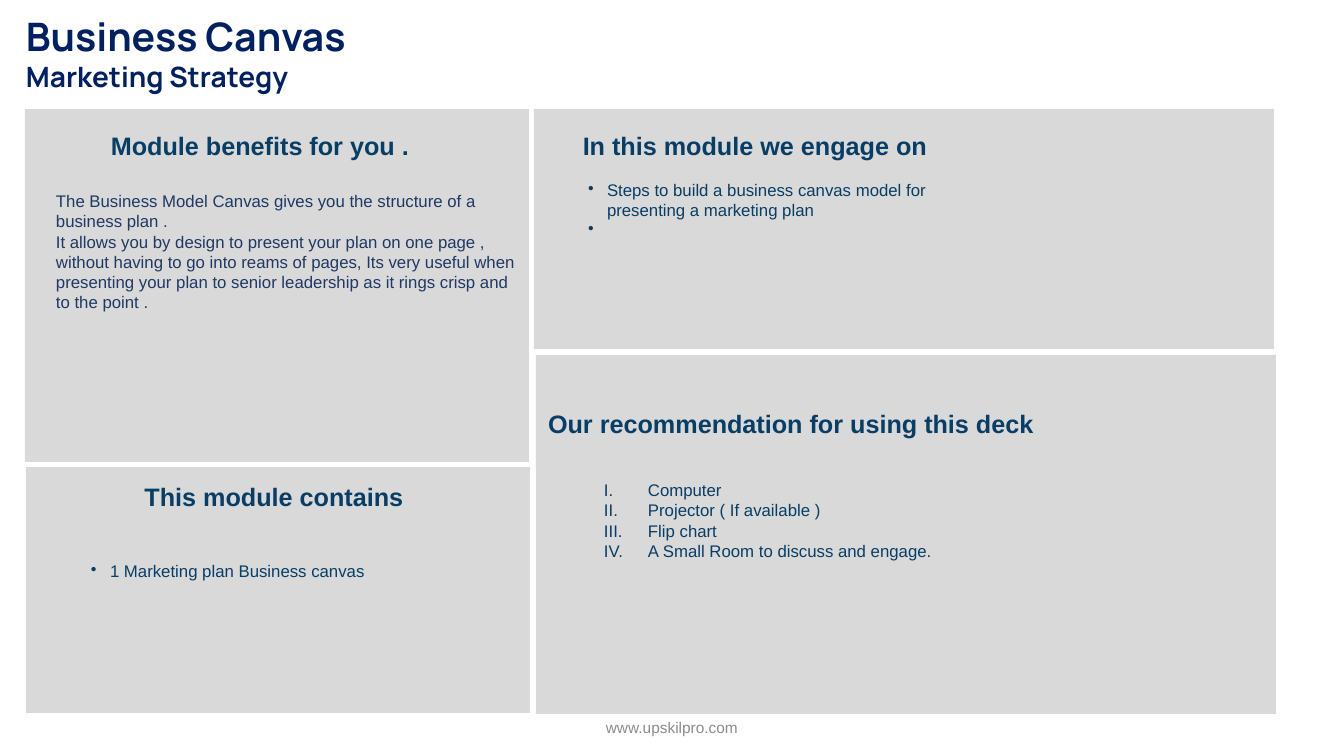
import pptx
import pptx.dml.color
import pptx.enum.shapes
import pptx.enum.text
import pptx.util
import lxml.etree
import pptx.oxml.ns

RGBColor = pptx.dml.color.RGBColor
PANEL_GREY = RGBColor(0xD9, 0xD9, 0xD9)
TITLE_NAVY = RGBColor(0x00, 0x20, 0x60)
TEAL = RGBColor(0x08, 0x3D, 0x65)
BODY_BLUE = RGBColor(0x20, 0x38, 0x64)
FOOTER_GREY = RGBColor(0x8C, 0x8C, 0x8C)

LEFT = pptx.enum.text.PP_ALIGN.LEFT
CENTER = pptx.enum.text.PP_ALIGN.CENTER
BULLET = ("buChar", "char", "•")
ROMAN = ("buAutoNum", "type", "romanUcPeriod")


def px(length):
    """Turn pixels, 100.8 to the inch, into EMU."""
    return pptx.util.Inches(length / 100.8)


class CanvasSlide:
    def __init__(self, deck):
        self.slide = deck.slides.add_slide(deck.slide_layouts[6])
        self.font = "Arial"

    def panel(self, left, top, width, height):
        shape = self.slide.shapes.add_shape(
            pptx.enum.shapes.MSO_SHAPE.RECTANGLE,
            px(left), px(top), px(width), px(height))
        shape.shadow.inherit = False
        shape.fill.solid()
        shape.fill.fore_color.rgb = PANEL_GREY
        shape.line.fill.background()

    def text(self, left, top, width, height, lines, color=TEAL, sizes=(12,),
             bold=False, align=LEFT, font=None, marker=None, indent=0):
        """Write one paragraph per line; the last size serves all further lines."""
        box = self.slide.shapes.add_textbox(px(left), px(top), px(width), px(height))
        frame = box.text_frame
        frame.word_wrap = True
        frame.margin_left = frame.margin_right = 0
        frame.margin_top = frame.margin_bottom = 0
        for index, line in enumerate(lines):
            para = frame.paragraphs[0] if index == 0 else frame.add_paragraph()
            para.text = line
            para.alignment = align
            if marker:
                self.mark(para, marker, indent)
            para.font.name = font or self.font
            para.font.size = pptx.util.Pt(sizes[min(index, len(sizes) - 1)])
            para.font.bold = bold
            para.font.color.rgb = color
        return frame

    def mark(self, para, marker, indent):
        """Give a paragraph a bullet or number with a hanging indent."""
        tag, attribute, value = marker
        properties = para._p.get_or_add_pPr()
        properties.set("marL", str(px(indent)))
        properties.set("indent", str(-px(indent)))
        element = lxml.etree.SubElement(properties, pptx.oxml.ns.qn("a:" + tag))
        element.set(attribute, value)

    def heading(self, center, top, text):
        width = 500
        self.text(center - width // 2, top, width, 30, [text],
                  sizes=(18,), bold=True, align=CENTER)

    def footer(self, text):
        frame = self.text(445, 707, 454, 40, [text], color=FOOTER_GREY,
                          sizes=(11,), align=CENTER)
        frame.vertical_anchor = pptx.enum.text.MSO_ANCHOR.MIDDLE


def main():
    deck = pptx.Presentation()
    deck.slide_width, deck.slide_height = px(1344), px(756)
    canvas = CanvasSlide(deck)

    for place in ((26, 467, 504, 246), (536, 355, 740, 359),
                  (534, 109, 740, 240), (25, 109, 504, 353)):
        canvas.panel(*place)

    canvas.text(26, 12, 1066, 82, ["Business Canvas", "Marketing Strategy"],
                color=TITLE_NAVY, sizes=(28, 20), bold=True, font="Manrope")

    canvas.heading(260, 130, "Module benefits for you .")
    canvas.text(56, 191, 462, 122, [
        "The Business Model Canvas gives you the structure of a business plan .",
        "It allows you by design to present your plan on one page , without "
        "having to go into reams of pages, Its very useful when presenting your "
        "plan to senior leadership as it rings crisp and to the point .",
    ], color=BODY_BLUE)

    canvas.heading(755, 130, "In this module we engage on")
    canvas.text(588, 180, 400, 62, [
        "Steps to build a business canvas model for presenting a marketing plan",
        " ",
    ], marker=BULLET, indent=19)

    canvas.heading(791, 408, "Our recommendation for using this deck")
    canvas.text(604, 480, 384, 102, [
        "Computer",
        "Projector ( If available )",
        "Flip chart",
        "A Small Room to discuss and engage.",
    ], marker=ROMAN, indent=44)

    canvas.heading(274, 481, "This module contains")
    canvas.text(91, 561, 416, 22, ["1 Marketing plan Business canvas"],
                marker=BULLET, indent=19)

    canvas.footer("www.upskilpro.com")
    deck.save("out.pptx")


if __name__ == "__main__":
    main()
